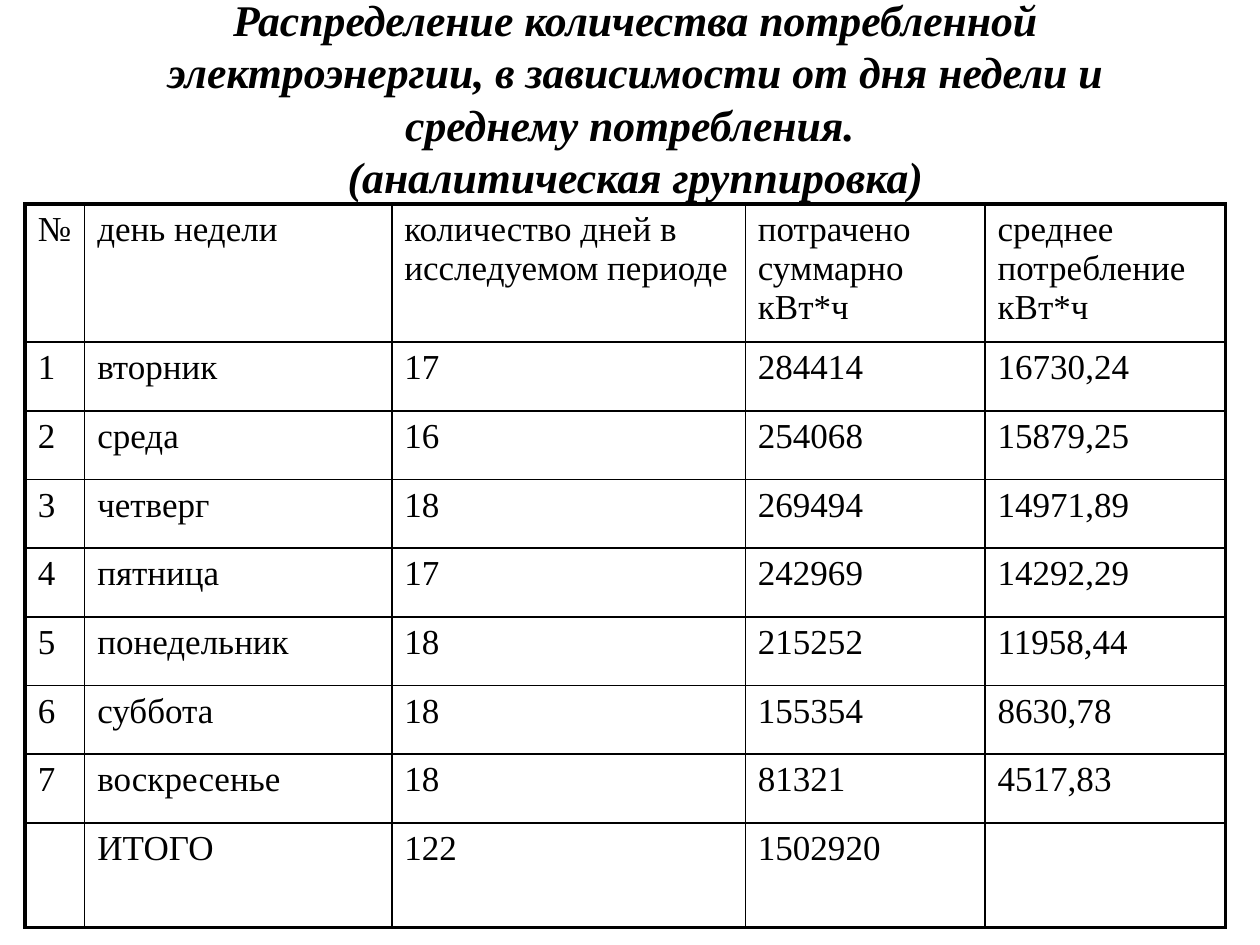
from lxml import etree
from pptx import Presentation
from pptx.dml.color import RGBColor
from pptx.enum.text import MSO_ANCHOR, PP_ALIGN
from pptx.oxml.ns import qn
from pptx.util import Pt

CENTER = PP_ALIGN.CENTER
MIDDLE = MSO_ANCHOR.MIDDLE
TITLE_ONLY = 5

COLORS = {"ink": "000000", "background": "FFFFFF"}
FONT = "Times New Roman"
OUTER_LINE, INNER_LINE = Pt(2.25), Pt(1)

TITLE_LINES = [
    "Распределение количества потребленной электроэнергии, "
    "в зависимости от дня недели и среднему потребления. ",
    "(аналитическая группировка)",
]
CONSUMPTION_ROWS = [
    ["№", "день недели", "количество дней в исследуемом периоде",
     "потрачено суммарно кВт*ч", "среднее потребление кВт*ч"],
    ["1", "вторник", "17", "284414", "16730,24"],
    ["2", "среда", "16", "254068", "15879,25"],
    ["3", "четверг", "18", "269494", "14971,89"],
    ["4", "пятница", "17", "242969", "14292,29"],
    ["5", "понедельник", "18", "215252", "11958,44"],
    ["6", "суббота", "18", "155354", "8630,78"],
    ["7", "воскресенье", "18", "81321", "4517,83"],
    ["", "ИТОГО", "122", "1502920", ""],
]
COLUMN_WIDTHS = [34, 175.5, 202, 137, 137.5]
ROW_HEIGHTS = [79] + [39.25] * 7 + [60]


def add_run(paragraph, text, size, emphasis=False):
    run = paragraph.add_run()
    run.text = text
    font = run.font
    font.name, font.size = FONT, Pt(size)
    font.bold = font.italic = emphasis
    font.color.rgb = RGBColor.from_string(COLORS["ink"])


def add_title(slide):
    title = slide.shapes.title
    title.left, title.top, title.width, title.height = Pt(60), Pt(0), Pt(606), Pt(111.6)
    frame = title.text_frame
    frame.word_wrap = True
    frame.vertical_anchor = MIDDLE
    paragraph = frame.paragraphs[0]
    paragraph.alignment = CENTER
    paragraph.line_spacing = Pt(30)
    for index, line in enumerate(TITLE_LINES):
        if index:
            paragraph.add_line_break()
        add_run(paragraph, line, 25, emphasis=True)


def set_borders(cell, widths):
    """Draw the cell's edges; widths are in the order left, right, top, bottom."""
    properties = cell._tc.get_or_add_tcPr()
    for side, width in zip("LRTB", widths):
        line = etree.SubElement(properties, qn(f"a:ln{side}"), w=str(width))
        fill = etree.SubElement(line, qn("a:solidFill"))
        etree.SubElement(fill, qn("a:srgbClr"), val=COLORS["ink"])


def set_space_before(paragraph, percent):
    """Set the space before as a share of the text size."""
    properties = paragraph._p.get_or_add_pPr()
    spacing = etree.SubElement(properties, qn("a:spcBef"))
    etree.SubElement(spacing, qn("a:spcPct"), val=str(percent * 1000))


def add_consumption_table(slide):
    row_count, column_count = len(ROW_HEIGHTS), len(COLUMN_WIDTHS)
    table = slide.shapes.add_table(
        row_count, column_count, Pt(14.4), Pt(116.6),
        Pt(sum(COLUMN_WIDTHS)), Pt(sum(ROW_HEIGHTS)),
    ).table
    table.first_row = table.horz_banding = False
    for column, width in zip(table.columns, COLUMN_WIDTHS):
        column.width = Pt(width)
    for row, height in zip(table.rows, ROW_HEIGHTS):
        row.height = Pt(height)

    for row_index, texts in enumerate(CONSUMPTION_ROWS):
        for column_index, text in enumerate(texts):
            cell = table.cell(row_index, column_index)
            on_outer_edge = (
                column_index == 0, column_index == column_count - 1,
                row_index == 0, row_index == row_count - 1,
            )
            set_borders(cell, [OUTER_LINE if outer else INNER_LINE for outer in on_outer_edge])
            cell.fill.background()
            if text:
                paragraph = cell.text_frame.paragraphs[0]
                set_space_before(paragraph, 20)
                add_run(paragraph, text, 20)


def main():
    presentation = Presentation()
    presentation.slide_width, presentation.slide_height = Pt(720), Pt(540)
    slide = presentation.slides.add_slide(presentation.slide_layouts[TITLE_ONLY])
    background = slide.background.fill
    background.solid()
    background.fore_color.rgb = RGBColor.from_string(COLORS["background"])
    add_title(slide)
    add_consumption_table(slide)
    presentation.save("out.pptx")


if __name__ == "__main__":
    main()
